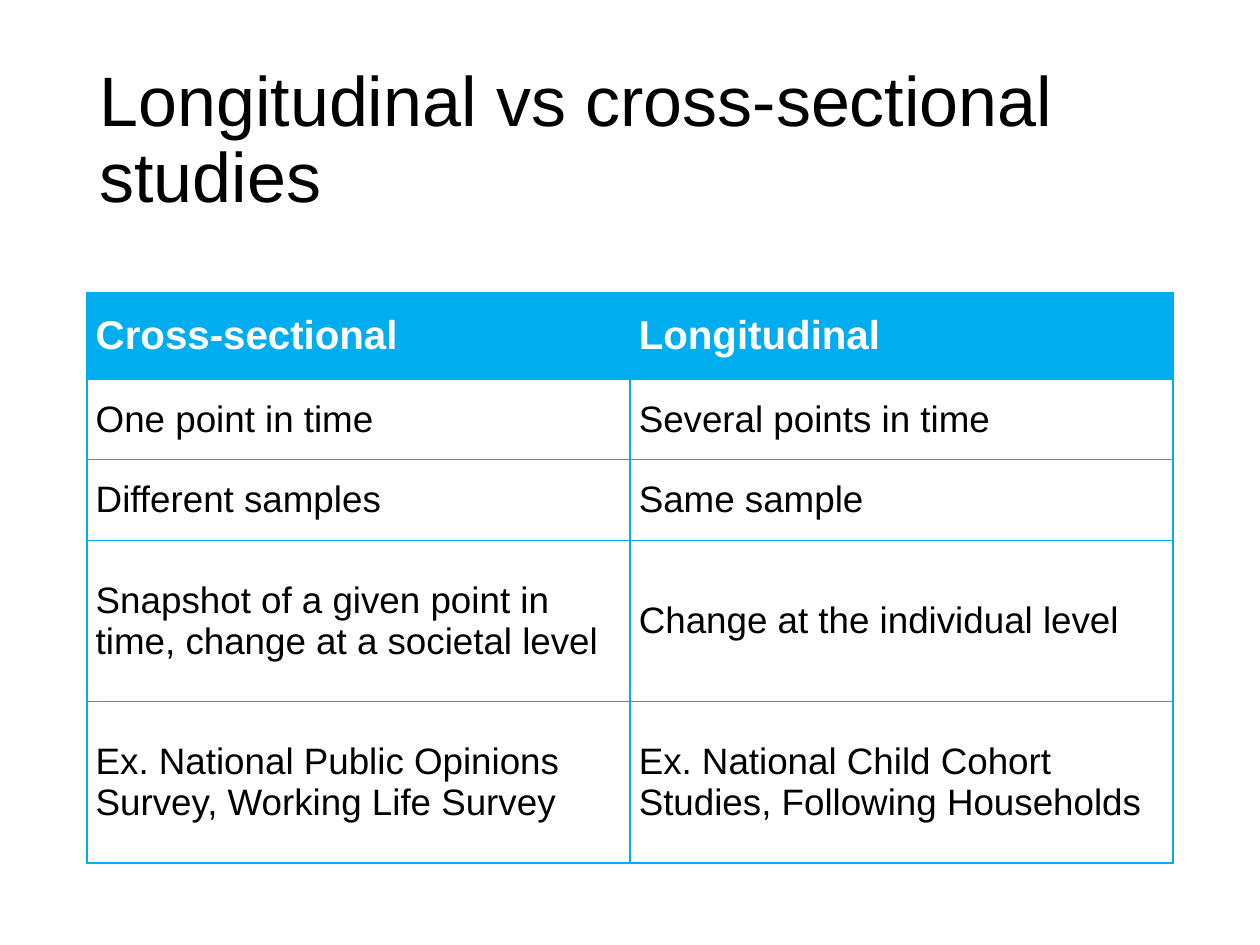
"""Build a slide comparing cross-sectional and longitudinal studies."""
from lxml.etree import SubElement
from pptx import Presentation
from pptx.dml.color import RGBColor
from pptx.enum.text import MSO_ANCHOR, MSO_AUTO_SIZE, PP_ALIGN
from pptx.oxml.ns import qn
from pptx.util import Inches, Pt

TITLE = "Longitudinal vs cross-sectional studies"
ROWS = [
    ("Cross-sectional", "Longitudinal"),
    ("One point in time", "Several points in time"),
    ("Different samples", "Same sample"),
    ("Snapshot of a given point in time, change at a societal level",
     "Change at the individual level"),
    ("Ex. National Public Opinions Survey, Working Life Survey",
     "Ex. National Child Cohort Studies, Following Households"),
]
ROW_HEIGHTS = [0.69, 0.64, 0.64, 1.28, 1.28]
LEFT, WIDTH = 0.69, 8.62
TABLE_TOP = 2.32
FONT = "Arial"
BLUE = RGBColor(0x00, 0xAD, 0xEF)
BLACK = RGBColor(0x00, 0x00, 0x00)
WHITE = RGBColor(0xFF, 0xFF, 0xFF)


def write(frame, text, size, color=BLACK, bold=False, spacing=0, line=1.0):
    frame.word_wrap = True
    para = frame.paragraphs[0]
    para.alignment = PP_ALIGN.LEFT
    para.line_spacing = line
    para.space_before = para.space_after = Pt(spacing)
    span = para.add_run()
    span.text = text
    span.font.name = FONT
    span.font.size = Pt(size)
    span.font.bold = bold
    span.font.color.rgb = color


def add_borders(cell, color=BLUE, width=0.75):
    properties = cell._tc.get_or_add_tcPr()
    for index, side in enumerate(("a:lnL", "a:lnR", "a:lnT", "a:lnB")):
        border = properties.makeelement(qn(side), {"w": str(Pt(width))})
        fill = SubElement(border, qn("a:solidFill"))
        SubElement(fill, qn("a:srgbClr"), val=str(color))
        properties.insert(index, border)


def add_title(page):
    title = page.shapes.title
    title.left, title.top = Inches(LEFT), Inches(0.4)
    title.width, title.height = Inches(WIDTH), Inches(1.45)
    frame = title.text_frame
    frame.auto_size = MSO_AUTO_SIZE.NONE
    frame.vertical_anchor = MSO_ANCHOR.MIDDLE
    write(frame, TITLE, 40, line=0.9)


def add_comparison(page):
    table = page.shapes.add_table(
        len(ROWS), len(ROWS[0]), Inches(LEFT), Inches(TABLE_TOP),
        Inches(WIDTH), Inches(sum(ROW_HEIGHTS))).table
    table.horz_banding = False
    for column in table.columns:
        column.width = Inches(WIDTH / len(ROWS[0]))
    for row_index, (texts, height) in enumerate(zip(ROWS, ROW_HEIGHTS)):
        table.rows[row_index].height = Inches(height)
        header = row_index == 0
        for column_index, text in enumerate(texts):
            cell = table.cell(row_index, column_index)
            cell.vertical_anchor = MSO_ANCHOR.MIDDLE
            cell.margin_left = cell.margin_right = Inches(0.07)
            cell.margin_top = cell.margin_bottom = 0
            if header:
                cell.fill.solid()
                cell.fill.fore_color.rgb = BLUE
            else:
                cell.fill.background()
            write(cell.text_frame, text, 23 if header else 21,
                  color=WHITE if header else BLACK, bold=header, spacing=6)
            add_borders(cell)


def main():
    deck = Presentation()
    deck.slide_width, deck.slide_height = Inches(10), Inches(7.5)
    page = deck.slides.add_slide(deck.slide_layouts[5])
    add_title(page)
    add_comparison(page)
    deck.save("out.pptx")


if __name__ == "__main__":
    main()
